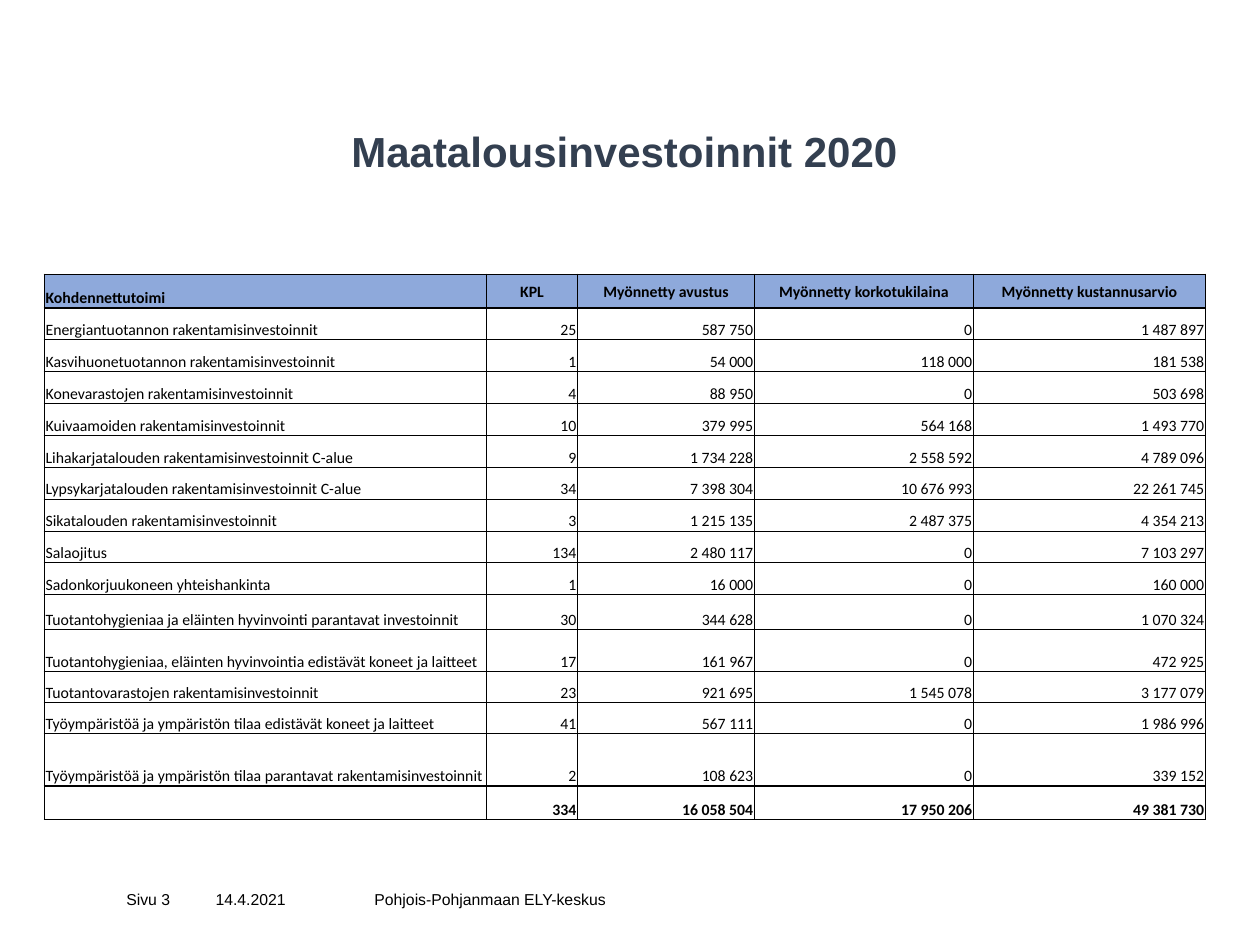
import pptx
import pptx.util
import pptx.dml.color
import pptx.enum.text
import pptx.oxml
import pptx.oxml.ns

Pt = pptx.util.Pt
ALIGN = pptx.enum.text.PP_ALIGN
ANCHOR = pptx.enum.text.MSO_ANCHOR
COLORS = {"title": "333F50", "text": "000000", "head": "8EA9DB", "line": "000000"}

TITLE = "Maatalousinvestoinnit 2020"
FOOTER = [  # text, left, width
    ("Sivu 3", 65.1, 51),
    ("14.4.2021", 116.1, 90.8),
    ("Pohjois-Pohjanmaan ELY-keskus", 206.9, 317.5),
]
HEAD = ("Kohdennettutoimi", "KPL", "Myönnetty avustus",
        "Myönnetty korkotukilaina", "Myönnetty kustannusarvio")
GRANTS = [
    ("Energiantuotannon rakentamisinvestoinnit", "25", "587 750", "0", "1 487 897"),
    ("Kasvihuonetuotannon rakentamisinvestoinnit", "1", "54 000", "118 000", "181 538"),
    ("Konevarastojen rakentamisinvestoinnit", "4", "88 950", "0", "503 698"),
    ("Kuivaamoiden rakentamisinvestoinnit", "10", "379 995", "564 168", "1 493 770"),
    ("Lihakarjatalouden rakentamisinvestoinnit C-alue", "9", "1 734 228", "2 558 592", "4 789 096"),
    ("Lypsykarjatalouden rakentamisinvestoinnit C-alue", "34", "7 398 304", "10 676 993", "22 261 745"),
    ("Sikatalouden rakentamisinvestoinnit", "3", "1 215 135", "2 487 375", "4 354 213"),
    ("Salaojitus", "134", "2 480 117", "0", "7 103 297"),
    ("Sadonkorjuukoneen yhteishankinta", "1", "16 000", "0", "160 000"),
    ("Tuotantohygieniaa ja eläinten hyvinvointi parantavat investoinnit", "30", "344 628", "0", "1 070 324"),
    ("Tuotantohygieniaa, eläinten hyvinvointia edistävät koneet ja laitteet", "17", "161 967", "0", "472 925"),
    ("Tuotantovarastojen rakentamisinvestoinnit", "23", "921 695", "1 545 078", "3 177 079"),
    ("Työympäristöä ja ympäristön tilaa edistävät koneet ja laitteet", "41", "567 111", "0", "1 986 996"),
    ("Työympäristöä ja ympäristön tilaa parantavat rakentamisinvestoinnit", "2", "108 623", "0", "339 152"),
]
TOTAL = ("", "334", "16 058 504", "17 950 206", "49 381 730")
ROWS = [HEAD, *GRANTS, TOTAL]
WIDTHS = [252.6, 52, 101.1, 125.1, 132.6]
HEIGHTS = [19.2] + [18.2] * 9 + [20, 24, 17.7, 17.7, 30, 19.2]
LEFT, TOP = 25.4, 156.8
THIN, THICK = 0.5, 1


def style(para, size, face, color="text", bold=False, align=ALIGN.LEFT):
    para.alignment = align
    font = para.font
    font.size, font.name, font.bold = Pt(size), face, bold
    font.color.rgb = pptx.dml.color.RGBColor.from_string(COLORS[color])


def add_text(slide, text, box, insets):
    """Add a text box, insets as left, top, right, bottom; return its paragraph."""
    frame = slide.shapes.add_textbox(*map(Pt, box)).text_frame
    frame.word_wrap = True
    frame.vertical_anchor = ANCHOR.MIDDLE
    (frame.margin_left, frame.margin_top,
     frame.margin_right, frame.margin_bottom) = map(Pt, insets)
    frame.text = text
    return frame.paragraphs[0]


def set_borders(cell, sides):
    """Draw the cell's edges, sides as a dict of edge letter to width."""
    props = cell._tc.get_or_add_tcPr()
    for spot, (side, width) in enumerate(sides.items()):
        props.insert(spot, pptx.oxml.parse_xml(
            f'<a:ln{side} {pptx.oxml.ns.nsdecls("a")} w="{int(Pt(width))}">'
            f'<a:solidFill><a:srgbClr val="{COLORS["line"]}"/></a:solidFill>'
            f'<a:prstDash val="solid"/></a:ln{side}>'))


def fill_cell(cell, text, row, col):
    last = len(ROWS) - 1
    head, total = row == 0, row == last
    cell.margin_left = cell.margin_top = cell.margin_right = Pt(0.7)
    cell.margin_bottom = 0
    cell.vertical_anchor = ANCHOR.MIDDLE if head and col else ANCHOR.BOTTOM
    if text:
        cell.text = text
    para = cell.text_frame.paragraphs[0]
    align = ALIGN.LEFT if col == 0 else ALIGN.CENTER if head else ALIGN.RIGHT
    style(para, 9, "Calibri", bold=head or total, align=align)
    if not text:
        para._p.append(pptx.oxml.parse_xml(
            f'<a:endParaRPr {pptx.oxml.ns.nsdecls("a")} sz="900"/>'))
    if head:
        cell.fill.solid()
        cell.fill.fore_color.rgb = pptx.dml.color.RGBColor.from_string(COLORS["head"])
    else:
        cell.fill.background()
    set_borders(cell, {
        "L": THICK if col == 0 else THIN,
        "R": THICK if col == len(HEAD) - 1 and not total else THIN,
        "T": THICK if row in (0, 1, last) else THIN,
        "B": THICK if row in (0, last - 1, last) else THIN,
    })


def add_grants(slide):
    table = slide.shapes.add_table(
        len(ROWS), len(HEAD), Pt(LEFT), Pt(TOP), Pt(sum(WIDTHS)), Pt(sum(HEIGHTS))).table
    table.horz_banding = table.first_row = False
    for col, width in enumerate(WIDTHS):
        table.columns[col].width = Pt(width)
    for row, (texts, height) in enumerate(zip(ROWS, HEIGHTS)):
        table.rows[row].height = Pt(height)
        for col, text in enumerate(texts):
            fill_cell(table.cell(row, col), text, row, col)


def main():
    deck = pptx.Presentation()
    deck.slide_width, deck.slide_height = Pt(720), Pt(540)
    slide = deck.slides.add_slide(deck.slide_layouts[6])
    title = add_text(slide, TITLE, (64.8, 60.5, 589.7, 79.2), (7.2, 3.6, 12.8, 32))
    style(title, 24, "Arial", "title", True, ALIGN.CENTER)
    for text, left, width in FOOTER:
        style(add_text(slide, text, (left, 508.3, width, 11), (7.2, 0, 7.2, 0)), 9, "Arial")
    add_grants(slide)
    deck.save("out.pptx")


if __name__ == "__main__":
    main()
